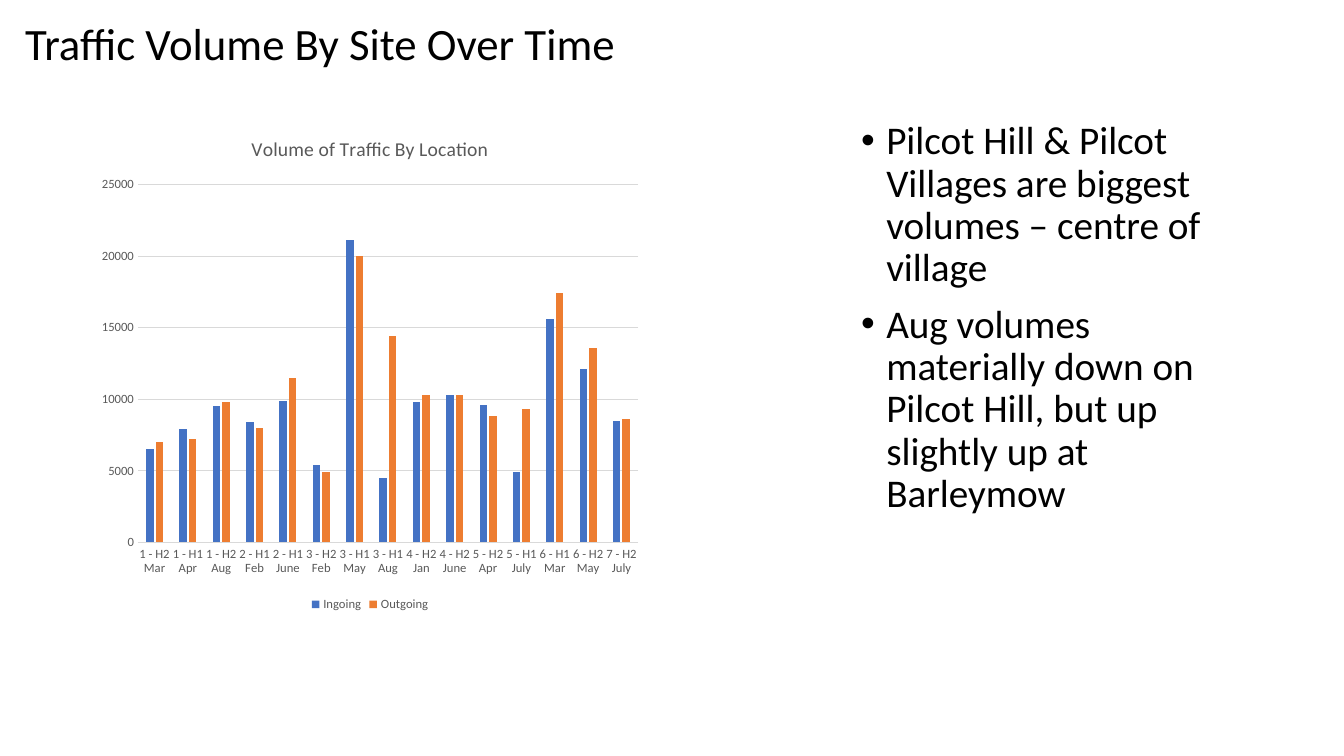
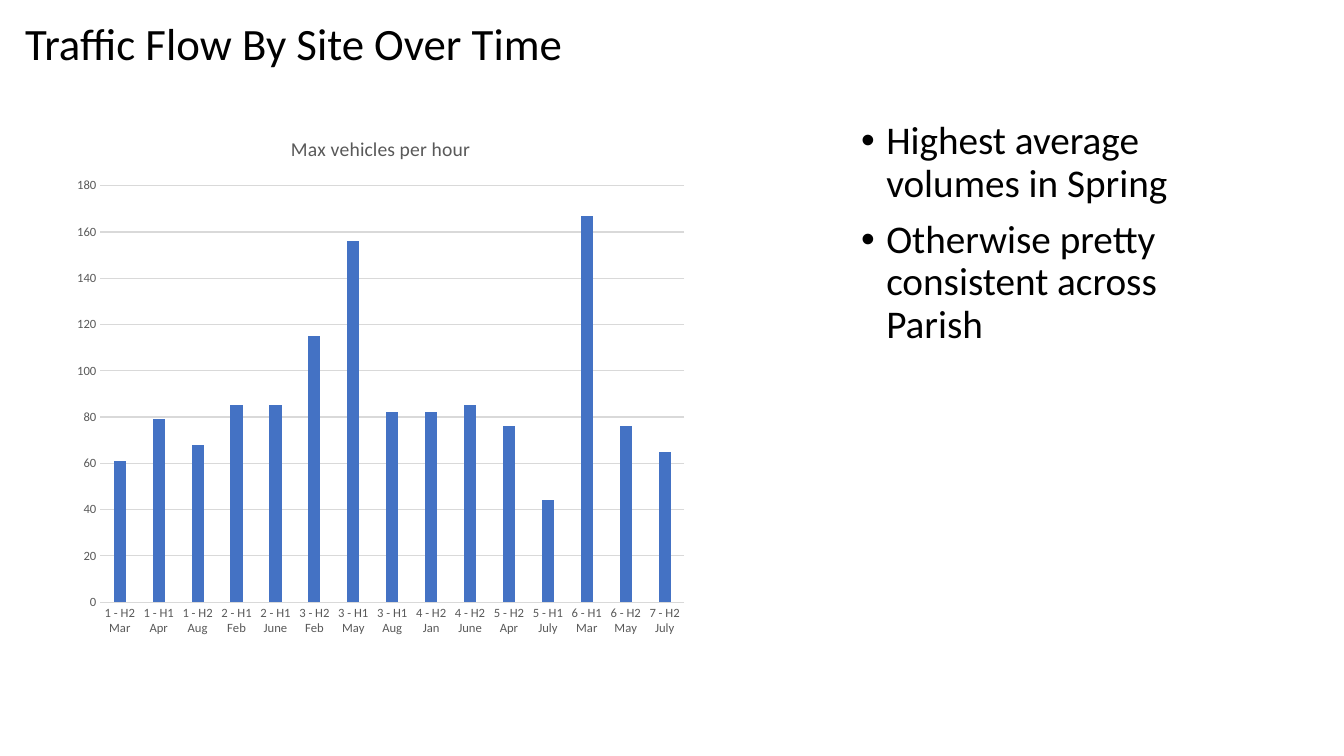
from pptx import Presentation
from pptx.chart.data import CategoryChartData
from pptx.dml.color import RGBColor
from pptx.enum.chart import XL_CHART_TYPE as ChartType, XL_LEGEND_POSITION as LegendPosition, XL_TICK_MARK as TickMark
from pptx.enum.text import MSO_ANCHOR as Anchor, MSO_AUTO_SIZE as AutoSize, PP_ALIGN as Align
from pptx.util import Inches, Pt

FONT = "Calibri"
BLACK = "000000"
GREY = "595959"
LIGHT_GREY = "D9D9D9"
SERIES_COLORS = ["4472C4", "ED7D31"]

SITES = [
    "1 - H2 Mar", "1 - H1 Apr", "1 - H2 Aug", "2 - H1 Feb", "2 - H1 June",
    "3 - H2 Feb", "3 - H1 May", "3 - H1 Aug", "4 - H2 Jan", "4 - H2 June",
    "5 - H2 Apr", "5 - H1 July", "6 - H1 Mar", "6 - H2 May", "7 - H2 July",
]

SLIDES = [
    {
        "title": "Traffic Volume By Site Over Time",
        "bullets": [
            "Pilcot Hill & Pilcot Villages are biggest volumes – centre of village",
            "Aug volumes materially down on Pilcot Hill, but up slightly up at Barleymow",
        ],
        "chart_title": "Volume of Traffic By Location",
        "chart_box": (0.9, 1.15, 5.54, 4.96),
        "series": {
            "Ingoing": [6500, 7900, 9500, 8400, 9900, 5400, 21100, 4500,
                        9800, 10300, 9600, 4900, 15600, 12100, 8500],
            "Outgoing": [7000, 7200, 9800, 8000, 11500, 4900, 20000, 14400,
                         10300, 10300, 8800, 9300, 17400, 13600, 8600],
        },
    },
    {
        "title": "Traffic Flow By Site Over Time",
        "bullets": [
            "Highest average volumes in Spring",
            "Otherwise pretty consistent across Parish",
        ],
        "chart_title": "Max vehicles per hour",
        "chart_box": (0.64, 1.15, 6.27, 5.26),
        "series": {
            "Max vehicles per hour": [61, 79, 68, 85, 85, 115, 156, 82,
                                      82, 85, 76, 44, 167, 76, 65],
        },
    },
]


def rgb(value):
    return RGBColor.from_string(value)


def style_font(font, size, color):
    font.name = FONT
    font.size = Pt(size)
    font.bold = False
    font.color.rgb = rgb(color)


presentation = Presentation()
presentation.slide_width = Inches(13.33)
presentation.slide_height = Inches(7.5)

for content in SLIDES:
    slide = presentation.slides.add_slide(presentation.slide_layouts[1])
    title, body = slide.placeholders

    for shape, box, lines, size, anchor in [
        (title, (0.15, 0.02, 11.5, 0.88), [content["title"]], 32, Anchor.MIDDLE),
        (body, (8.44, 1.15, 3.98, 5.6), content["bullets"], 28, Anchor.TOP),
    ]:
        shape.left, shape.top, shape.width, shape.height = map(Inches, box)
        text_frame = shape.text_frame
        text_frame.text = "\n".join(lines)
        text_frame.word_wrap = True
        text_frame.auto_size = AutoSize.NONE
        text_frame.vertical_anchor = anchor
        for paragraph in text_frame.paragraphs:
            paragraph.alignment = Align.LEFT
            paragraph.line_spacing = 0.9
            style_font(paragraph.runs[0].font, size, BLACK)

    for paragraph in body.text_frame.paragraphs:
        paragraph.space_before = Pt(10)
        properties = paragraph._p.get_or_add_pPr()
        properties.set("marL", str(Inches(0.25)))
        properties.set("indent", str(Inches(-0.25)))

    chart_data = CategoryChartData()
    chart_data.categories = SITES
    for name, values in content["series"].items():
        chart_data.add_series(name, values)
    chart = slide.shapes.add_chart(
        ChartType.COLUMN_CLUSTERED, *map(Inches, content["chart_box"]), chart_data
    ).chart
    style_font(chart.font, 10, BLACK)

    chart.has_title = True
    chart.chart_title.include_in_layout = False
    chart_heading = chart.chart_title.text_frame
    chart_heading.text = content["chart_title"]
    style_font(chart_heading.paragraphs[0].runs[0].font, 14, GREY)

    plot = chart.plots[0]
    plot.vary_by_categories = False
    plot.gap_width = 219
    plot.overlap = -27
    for series, color in zip(plot.series, SERIES_COLORS):
        series.format.fill.solid()
        series.format.fill.fore_color.rgb = rgb(color)

    category_axis, value_axis = chart.category_axis, chart.value_axis
    for axis in (category_axis, value_axis):
        axis.major_tick_mark = TickMark.NONE
        axis.minor_tick_mark = TickMark.NONE
        style_font(axis.tick_labels.font, 9, GREY)
    value_axis.format.line.fill.background()
    value_axis.has_major_gridlines = True
    for line in (category_axis.format.line, value_axis.major_gridlines.format.line):
        line.color.rgb = rgb(LIGHT_GREY)
        line.width = Pt(0.75)

    chart.has_legend = len(content["series"]) > 1
    if chart.has_legend:
        chart.legend.position = LegendPosition.BOTTOM
        chart.legend.include_in_layout = False
        style_font(chart.legend.font, 9, GREY)

presentation.save("out.pptx")
